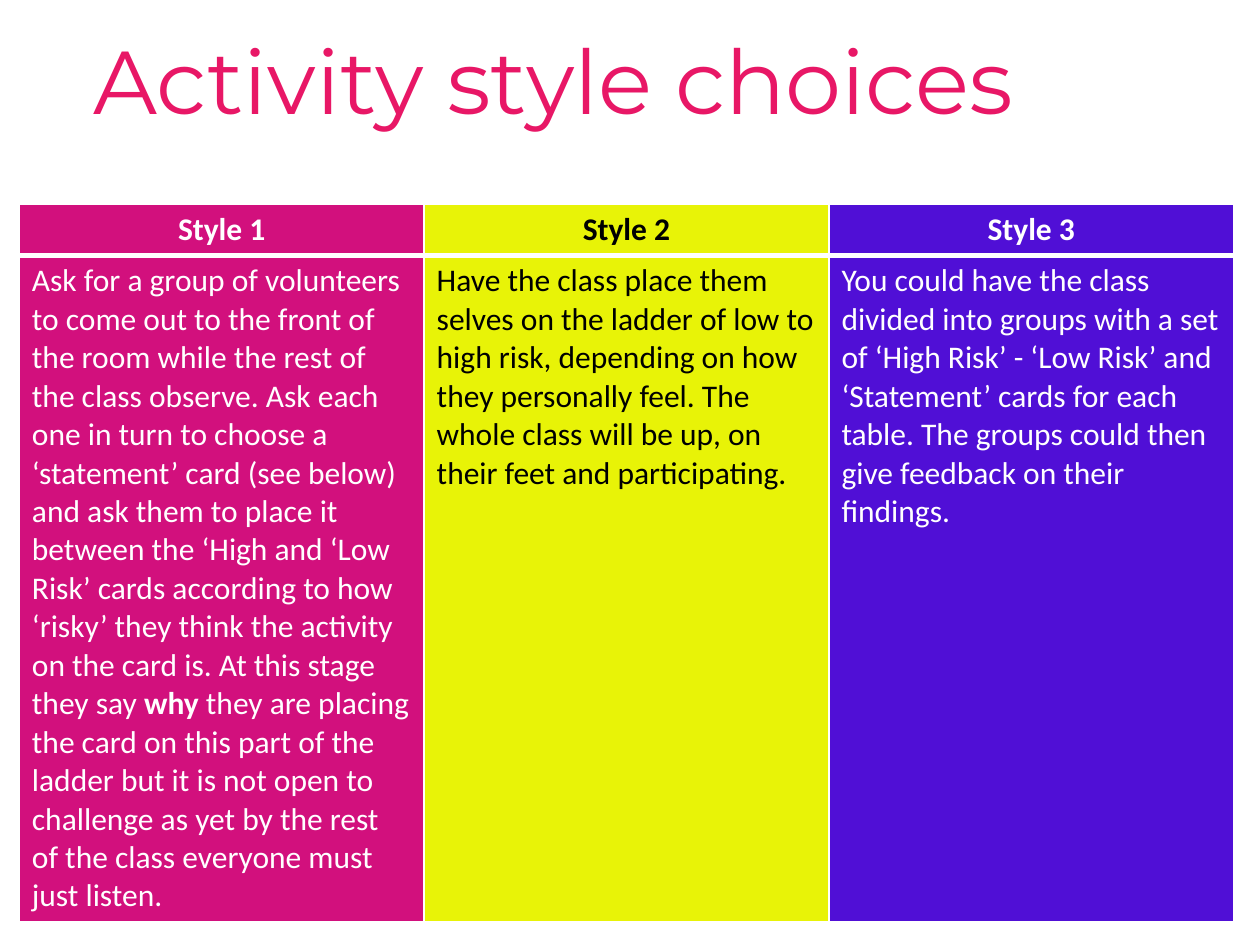
from lxml.etree import SubElement
from pptx import Presentation
from pptx.dml.color import RGBColor
from pptx.enum.text import MSO_ANCHOR, PP_ALIGN
from pptx.oxml.ns import qn
from pptx.util import Cm, Pt

WHITE = RGBColor(0xFF, 0xFF, 0xFF)
BLACK = RGBColor(0x00, 0x00, 0x00)
ROSE = RGBColor(0xE8, 0x17, 0x66)
MAGENTA = RGBColor(0xD2, 0x10, 0x7D)
YELLOW = RGBColor(0xE8, 0xF3, 0x07)
VIOLET = RGBColor(0x50, 0x0F, 0xD6)

# Heading, fill, text colour, and body runs as (text, bold)
STYLES = [
    ("Style 1", MAGENTA, WHITE, [
        ("Ask for a group of volunteers to come out to the front of the room "
         "while the rest of the class observe. Ask each one in turn to choose "
         "a ‘statement’ card (see below) and ask them to place it between the "
         "‘High and ‘Low Risk’ cards according to how ‘risky’ they think the "
         "activity on the card is. At this stage they say ", False),
        ("why ", True),
        ("they are placing the card on this part of the ladder but it is not "
         "open to challenge as yet by the rest of the class everyone must "
         "just listen.", False),
    ]),
    ("Style 2", YELLOW, BLACK, [
        ("Have the class place them selves on the ladder of low to high risk, "
         "depending on how they personally feel. The whole class will be up, "
         "on their feet and participating.", False),
    ]),
    ("Style 3", VIOLET, WHITE, [
        ("You could have the class divided into groups with a set of "
         "‘High Risk’ - ‘Low Risk’ and ‘Statement’ cards for each table. "
         "The groups could then give feedback on their findings.", False),
    ]),
]


def add_run(para, text, font, size, color, bold=False):
    span = para.add_run()
    span.text = text
    span.font.name = font
    span.font.size = Pt(size)
    span.font.bold = bold
    span.font.color.rgb = color


def fill_cell(cell, runs, fill, color, align, bottom_width):
    para = cell.text_frame.paragraphs[0]
    para.alignment = align
    for text, bold in runs:
        add_run(para, text, "Calibri", 18, color, bold)
    # Borders come before the fill in the cell properties
    properties = cell._tc.get_or_add_tcPr()
    for side, width in (("L", 1), ("R", 1), ("T", 1), ("B", bottom_width)):
        line = SubElement(properties, qn(f"a:ln{side}"), w=str(Pt(width)))
        solid = SubElement(line, qn("a:solidFill"))
        SubElement(solid, qn("a:srgbClr"), val=str(WHITE))
    cell.fill.solid()
    cell.fill.fore_color.rgb = fill


deck = Presentation()
deck.slide_width, deck.slide_height = Cm(25.4), Cm(19.05)
page = deck.slides.add_slide(deck.slide_layouts[6])

# Table: one column for each activity style
frame = page.shapes.add_table(2, len(STYLES), Cm(0.39), Cm(4.12), Cm(24.48), Cm(14.4))
table = frame.table
table.rows[0].height = Cm(1.03)
table.rows[1].height = Cm(13.37)
for index, (heading, fill, color, body) in enumerate(STYLES):
    table.columns[index].width = Cm(8.16)
    fill_cell(table.cell(0, index), [(heading, True)], fill, color, PP_ALIGN.CENTER, 3)
    fill_cell(table.cell(1, index), body, fill, color, PP_ALIGN.LEFT, 1)
# The header's thick rule is shared with the row below
for cell in table.rows[1].cells:
    cell._tc.tcPr.find(qn("a:lnT")).set("w", str(Pt(3)))

# Title
box = page.shapes.add_textbox(Cm(1.52), Cm(0.33), Cm(22.2), Cm(3.81))
title = box.text_frame
title.word_wrap = True
title.vertical_anchor = MSO_ANCHOR.TOP
title.margin_left = title.margin_right = Cm(0.36)
title.margin_top = title.margin_bottom = Cm(0.18)
add_run(title.paragraphs[0], "Activity style choices", "Montserrat", 51, ROSE)

deck.save("out.pptx")
